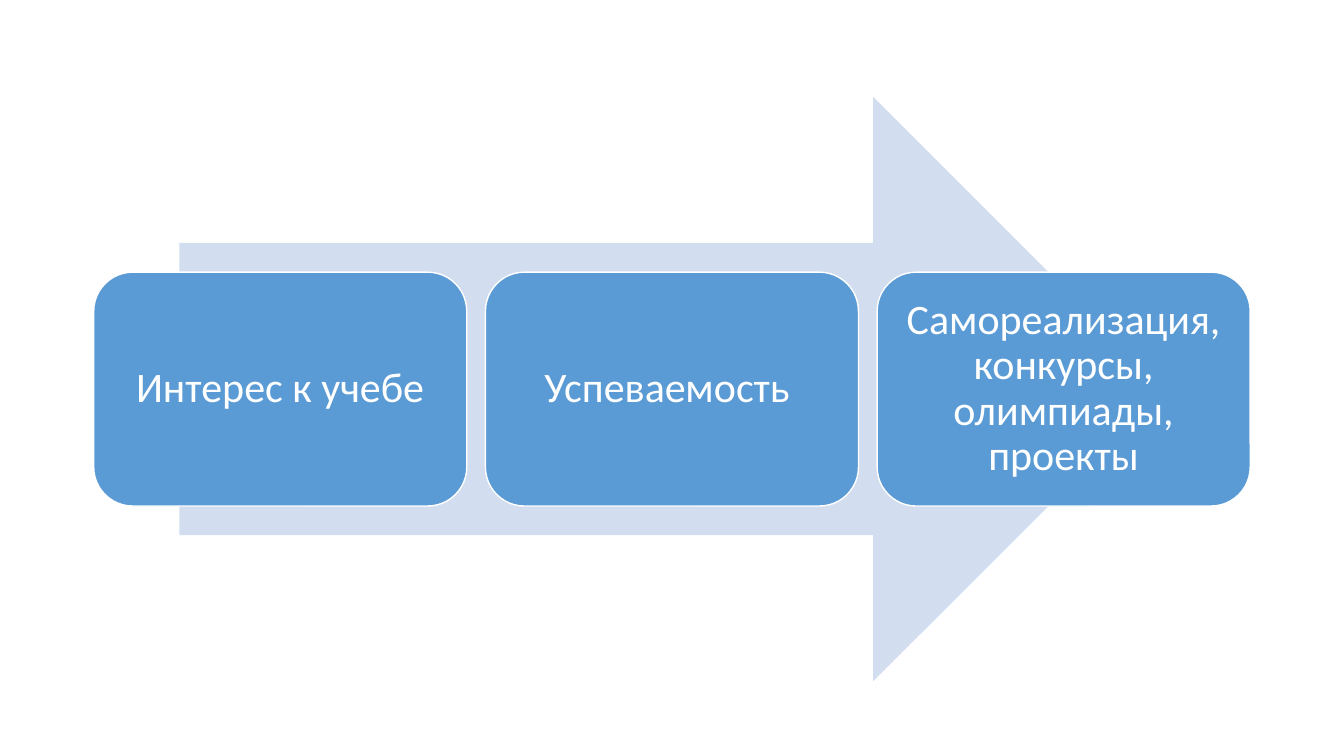
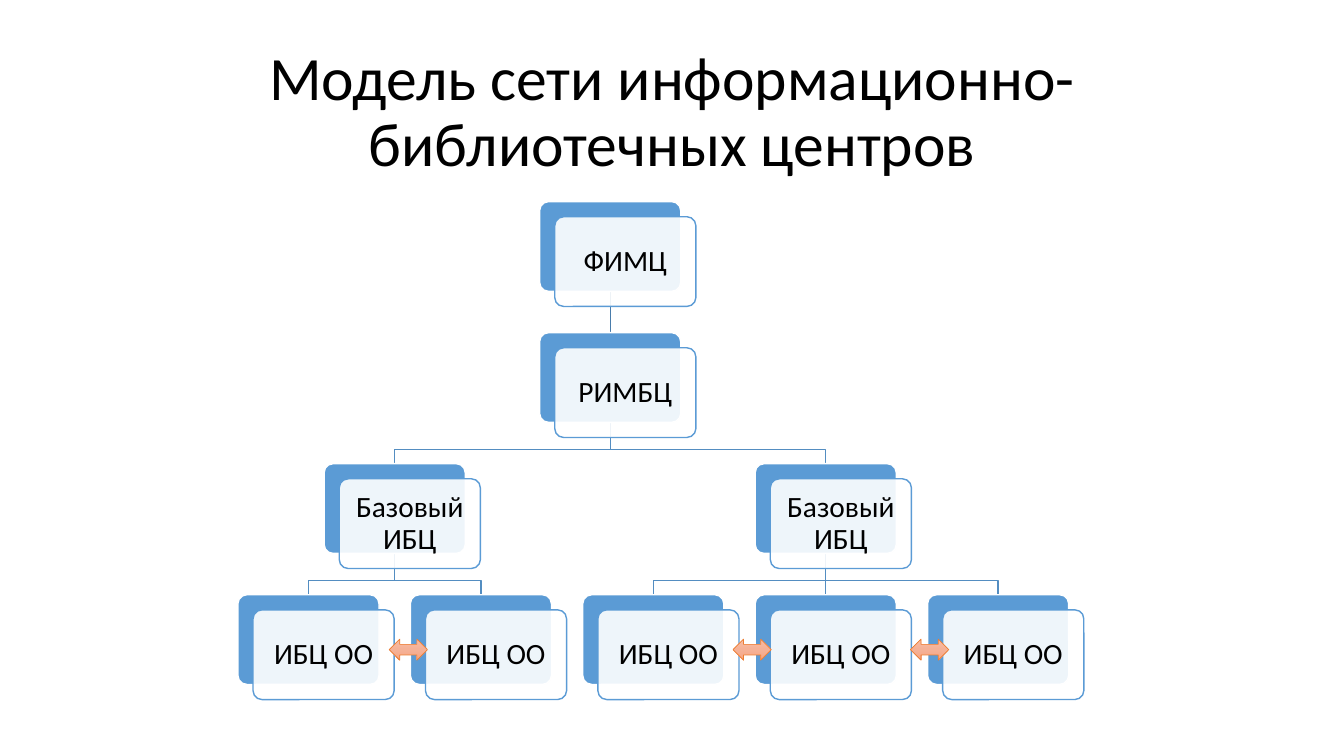
import copy

import pptx
import pptx.dml.color
import pptx.enum.shapes
import pptx.enum.text
import pptx.oxml
import pptx.oxml.ns
import pptx.util

PX = 9144  # EMU in one px, 100 px to the inch
SLIDE_W, SLIDE_H = 1333, 750
FONT = "Calibri"
BLUE, PALE, WHITE, BLACK, ORANGE = "5B9BD5", "D2DEEF", "FFFFFF", "000000", "ED7D31"
EDGE, TOP_EDGE = "538DC1", "497CAB"
SWAP_GRADIENT = [(0, "F7BDA5"), (0.5, "F5B196"), (1, "F8A582")]
SHAPE = pptx.enum.shapes.MSO_SHAPE

STEPS = ["Интерес к учебе", "Успеваемость ", "Самореализация, конкурсы, олимпиады, проекты"]
ARROW = (178, 96, 978, 580)
STEPS_LEFT, STEPS_RIGHT, STEP_TOP, STEP_W, STEP_H = 93, 1240, 270, 370, 232

TITLE = "Модель сети информационно-библиотечных центров"
TITLE_BOX = (92, 40, 1150, 145)
LEAF = ("ИБЦ ОО", [])
TREE = ("ФИМЦ", [("РИМБЦ", [("Базовый ИБЦ", [LEAF] * 2), ("Базовый ИБЦ", [LEAF] * 3)])])
TREE_LEFT, TREE_TOP, LEAF_PITCH, LEVEL_PITCH = 236, 200, 171, 130
CARD_W, CARD_H, CARD_SHIFT, BEND = 140, 89, 15, 27
SWAP_LEFTS, SWAP_TOP, SWAP_W, SWAP_H = (386, 727, 903), 634, 38, 21


def px(n):
    return pptx.util.Emu(round(n * PX))


def rgb(color):
    return pptx.dml.color.RGBColor.from_string(color)


def set_line(sp, color, width=1):
    sp.line.color.rgb = rgb(color)
    sp.line.width = pptx.util.Pt(width)


def add_shape(slide, kind, box, fill, line=None, width=1):
    sp = slide.shapes.add_shape(kind, *map(px, box))
    sp.shadow.inherit = False
    sp.fill.solid()
    sp.fill.fore_color.rgb = rgb(fill)
    if line:
        set_line(sp, line, width)
    else:
        sp.line.fill.background()
    return sp


def write(sp, text, size, color, inset):
    tf = sp.text_frame
    tf.word_wrap = True
    tf.auto_size = pptx.enum.text.MSO_AUTO_SIZE.NONE
    tf.vertical_anchor = pptx.enum.text.MSO_ANCHOR.MIDDLE
    tf.margin_left = tf.margin_right = tf.margin_top = tf.margin_bottom = px(inset)
    p = tf.paragraphs[0]
    p.text = text
    p.alignment = pptx.enum.text.PP_ALIGN.CENTER
    p.line_spacing = 0.9
    p.font.name = FONT
    p.font.size = pptx.util.Pt(size)
    p.font.color.rgb = rgb(color)


def add_card(slide, text, left, top):
    """Draw a blue card with a translucent labelled one over it; return the blue one."""
    back = add_shape(slide, SHAPE.ROUNDED_RECTANGLE, (left, top, CARD_W, CARD_H), BLUE, WHITE)
    front = add_shape(slide, SHAPE.ROUNDED_RECTANGLE,
                      (left + CARD_SHIFT, top + CARD_SHIFT, CARD_W, CARD_H), WHITE, BLUE)
    back.adjustments[0] = front.adjustments[0] = 0.1
    color = front._element.spPr.find(".//" + pptx.oxml.ns.qn("a:srgbClr"))
    color.append(pptx.oxml.parse_xml(
        '<a:alpha %s val="90000"/>' % pptx.oxml.ns.nsdecls("a")))
    write(front, text, 21, BLACK, 9)
    return back


def add_edge(slide, parent, child, color):
    """Join two cards from bottom to top, behind everything else."""
    x1, y1 = parent.left + parent.width // 2, parent.top + parent.height
    x2, y2 = child.left + child.width // 2, child.top
    if x1 == x2:
        sp = slide.shapes.add_connector(
            pptx.enum.shapes.MSO_CONNECTOR.STRAIGHT, x1, y1, x2, y2)
        sp.begin_connect(parent, 2)
        sp.end_connect(child, 0)
        sp._element.spPr.append(pptx.oxml.parse_xml(
            "<a:effectLst %s/>" % pptx.oxml.ns.nsdecls("a")))
    else:
        bend = y1 + px(BEND)
        builder = slide.shapes.build_freeform(x1, y1)
        builder.add_line_segments([(x1, bend), (x2, bend), (x2, y2)], close=False)
        sp = builder.convert_to_shape()
        sp.shadow.inherit = False
        sp.fill.background()
    set_line(sp, color)
    slide.shapes._spTree.insert(2, sp._element)


def add_branch(slide, node, leaf=0, depth=0):
    """Draw a node centred over its children; return its card and the next leaf number."""
    text, children = node
    cards, following = [], leaf
    for child in children:
        card, following = add_branch(slide, child, following, depth + 1)
        cards.append(card)
    following = following if children else leaf + 1
    if cards:
        left = (cards[0].left + cards[-1].left) / 2 / PX
    else:
        left = TREE_LEFT + leaf * LEAF_PITCH
    back = add_card(slide, text, left, TREE_TOP + depth * LEVEL_PITCH)
    for card in cards:
        add_edge(slide, back, card, EDGE if depth else TOP_EDGE)
    return back, following


def add_swap_arrow(slide, left):
    sp = add_shape(slide, SHAPE.LEFT_RIGHT_ARROW, (left, SWAP_TOP, SWAP_W, SWAP_H),
                   ORANGE, ORANGE, 0.5)
    sp.fill.gradient()
    sp.fill.gradient_angle = 270
    stops = sp._element.spPr.find(".//" + pptx.oxml.ns.qn("a:gsLst"))
    stops.append(copy.deepcopy(stops[-1]))
    for stop, (position, color) in zip(sp.fill.gradient_stops, SWAP_GRADIENT):
        stop.position = position
        stop.color.rgb = rgb(color)


def build_steps(prs):
    slide = prs.slides.add_slide(prs.slide_layouts[6])
    add_shape(slide, SHAPE.RIGHT_ARROW, ARROW, PALE)
    pitch = (STEPS_RIGHT - STEPS_LEFT - STEP_W) / (len(STEPS) - 1)
    for i, text in enumerate(STEPS):
        sp = add_shape(slide, SHAPE.ROUNDED_RECTANGLE,
                       (STEPS_LEFT + i * pitch, STEP_TOP, STEP_W, STEP_H), BLUE, WHITE)
        write(sp, text, 30, WHITE, 12)


def build_network(prs):
    slide = prs.slides.add_slide(prs.slide_layouts[5])
    title = slide.shapes.title
    title.left, title.top, title.width, title.height = map(px, TITLE_BOX)
    write(title, TITLE, 44, BLACK, 10)
    add_branch(slide, TREE)
    for left in SWAP_LEFTS:
        add_swap_arrow(slide, left)


def main():
    prs = pptx.Presentation()
    prs.slide_width, prs.slide_height = px(SLIDE_W), px(SLIDE_H)
    build_steps(prs)
    build_network(prs)
    prs.save("out.pptx")


if __name__ == "__main__":
    main()
